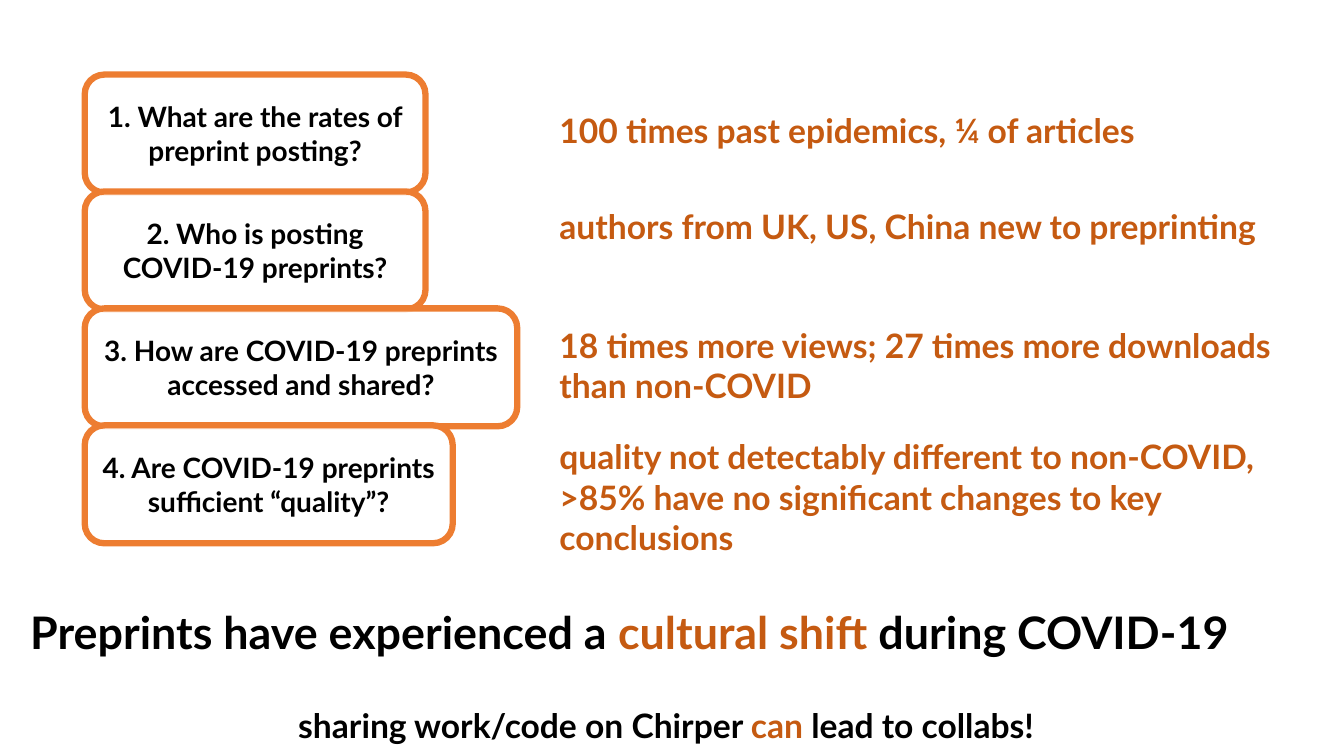
"""Build a slide pairing four preprint questions with their findings."""
from dataclasses import dataclass

from lxml import etree
from pptx import Presentation
from pptx import util as u
from pptx.dml.color import RGBColor
from pptx.enum import shapes, text
from pptx.oxml.ns import qn


@dataclass(frozen=True)
class Theme:
    font: str = "Lato"
    ink: str = "000000"
    accent: str = "C55A11"
    border: str = "ED7D31"
    paper: str = "FFFFFF"
    paper_alpha: int = 84
    border_pt: float = 4.5
    question_pt: int = 20
    body_pt: int = 24
    headline_pt: int = 32


@dataclass(frozen=True)
class Row:
    question: str
    question_width: float
    finding: str
    finding_top: float
    finding_height: float


THEME = Theme()
QUESTION_LEFT, QUESTION_TOP = 0.84, 0.74
QUESTION_HEIGHT, QUESTION_PITCH = 1.17, 1.16
FINDING_LEFT, FINDING_WIDTH = 5.45, 7.5

ROWS = [
    Row("1. What are the rates of preprint posting?", 3.38,
        "100 times past epidemics, ¼ of articles", 1.04, 0.5),
    Row("2. Who is posting COVID-19 preprints?", 3.38,
        "authors from UK, US, China new to preprinting", 1.99, 0.5),
    Row("3. How are COVID-19 preprints accessed and shared?", 4.29,
        "18 times more views; 27 times more downloads than non-COVID", 3.17, 0.91),
    Row("4. Are COVID-19 preprints sufficient “quality”?", 3.65,
        "quality not detectably different to non-COVID, "
        ">85% have no significant changes to key conclusions", 4.28, 1.31),
]
HEADLINE = [("Preprints have experienced a ", THEME.ink),
            ("cultural shift ", THEME.accent),
            ("during COVID-19", THEME.ink)]
CLOSING = [("sharing work/code on Chirper ", THEME.ink),
           ("can", THEME.accent),
           (" lead to collabs!", THEME.ink)]


def write(sp, runs: list[tuple[str, str]], *, size: int,
          align=text.PP_ALIGN.LEFT, anchor=text.MSO_ANCHOR.TOP,
          fit=text.MSO_AUTO_SIZE.NONE) -> None:
    """Fill a shape with one bold paragraph of coloured runs."""
    tf = sp.text_frame
    tf.word_wrap, tf.auto_size, tf.vertical_anchor = True, fit, anchor
    p = tf.paragraphs[0]
    p.alignment = align
    for words, color in runs:
        r = p.add_run()
        r.text = words
        r.font.name, r.font.size, r.font.bold = THEME.font, u.Pt(size), True
        r.font.color.rgb = RGBColor.from_string(color)


def add_question(s, row: Row, top: float) -> None:
    """Draw a rounded, outlined question box."""
    sp = s.shapes.add_shape(
        shapes.MSO_SHAPE.ROUNDED_RECTANGLE, u.Inches(QUESTION_LEFT), u.Inches(top),
        u.Inches(row.question_width), u.Inches(QUESTION_HEIGHT))
    sp.shadow.inherit = False
    sp.fill.solid()
    sp.fill.fore_color.rgb = RGBColor.from_string(THEME.paper)
    color = sp.fill._xPr.find(qn("a:solidFill"))[0]
    etree.SubElement(color, qn("a:alpha"), val=str(THEME.paper_alpha * 1000))
    sp.line.color.rgb = RGBColor.from_string(THEME.border)
    sp.line.width = u.Pt(THEME.border_pt)
    write(sp, [(row.question, THEME.ink)], size=THEME.question_pt,
          align=text.PP_ALIGN.CENTER, anchor=text.MSO_ANCHOR.MIDDLE)


def add_note(s, runs: list[tuple[str, str]], left: float, top: float,
             width: float, height: float) -> None:
    """Draw a text box that grows with its text."""
    sp = s.shapes.add_textbox(*map(u.Inches, (left, top, width, height)))
    write(sp, runs, size=THEME.body_pt, fit=text.MSO_AUTO_SIZE.SHAPE_TO_FIT_TEXT)


def main() -> None:
    """Build and save the slide."""
    prs = Presentation()
    prs.slide_width, prs.slide_height = u.Inches(13.33), u.Inches(7.5)
    s = prs.slides.add_slide(prs.slide_layouts.get_by_name("Title Only"))
    title = s.shapes.title
    title.left, title.top, title.width, title.height = map(
        u.Inches, (0.2, 5.95, 12.93, 0.64))
    write(title, HEADLINE, size=THEME.headline_pt)
    for i, row in enumerate(ROWS):
        add_question(s, row, QUESTION_TOP + i * QUESTION_PITCH)
    for row in ROWS:
        add_note(s, [(row.finding, THEME.accent)], FINDING_LEFT, row.finding_top,
                 FINDING_WIDTH, row.finding_height)
    add_note(s, CLOSING, 2.86, 6.94, 8.34, 0.5)
    prs.save("out.pptx")


if __name__ == "__main__":
    main()
